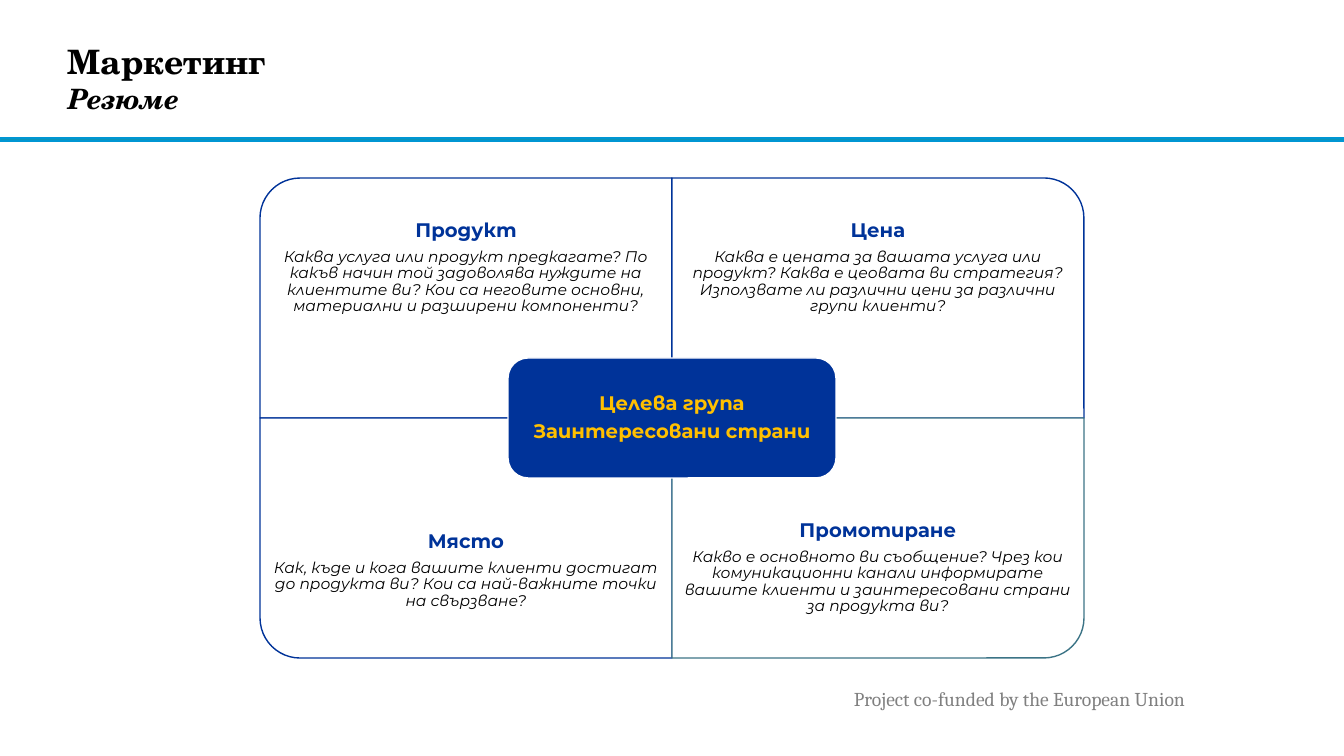
from pptx import Presentation
from pptx.dml.color import RGBColor
from pptx.enum.lang import MSO_LANGUAGE_ID
from pptx.enum.shapes import MSO_SHAPE
from pptx.enum.text import MSO_ANCHOR, PP_ALIGN
from pptx.util import Emu, Pt

WHITE = RGBColor(0xFF, 0xFF, 0xFF)
BLACK = RGBColor(0, 0, 0)
GREY = RGBColor(0x80, 0x80, 0x80)
NAVY = RGBColor(0x00, 0x33, 0x99)
TEAL = RGBColor(0x3C, 0x74, 0x86)
GOLD = RGBColor(0xFF, 0xC0, 0x00)
BAND_FILL = RGBColor(0x0C, 0x94, 0xB7)
BAND_LINE = RGBColor(0x00, 0x96, 0xD3)

RECTANGLE = MSO_SHAPE.RECTANGLE
ROUNDED = MSO_SHAPE.ROUNDED_RECTANGLE
ONE_ROUND = MSO_SHAPE.ROUND_1_RECTANGLE
LEFT, CENTER = PP_ALIGN.LEFT, PP_ALIGN.CENTER
TOP, MIDDLE = MSO_ANCHOR.TOP, MSO_ANCHOR.MIDDLE
BULGARIAN = MSO_LANGUAGE_ID.BULGARIAN

TITLE = {"name": "TeX Gyre Schola", "size": Pt(24), "bold": True, "color": BLACK,
         "language_id": BULGARIAN}
SUBTITLE = {**TITLE, "size": Pt(20), "italic": True}
HEADING = {"name": "Montserrat", "size": Pt(14), "bold": True, "color": NAVY,
           "language_id": BULGARIAN}
BODY = {**HEADING, "size": Pt(11), "bold": False, "italic": True, "color": BLACK}
HUB = {**HEADING, "color": GOLD}
FOOTER = {"name": "Cambria", "size": Pt(14), "color": GREY}

TITLE_LINES = [("Маркетинг", TITLE), ("Резюме", SUBTITLE)]
FOOTER_TEXT = "Project co-funded by the European Union"
HUB_LINES = ["Целева група", "Заинтересовани страни"]
QUADRANTS = [
    {"column": 0, "row": 0, "rotation": 270, "line": NAVY, "text_top": 178,
     "heading": "Продукт",
     "body": "Каква услуга или продукт предкагате? По какъв начин той задоволява нуждите "
             "на клиентите ви? Кои са неговите основни, материални и разширени компоненти?"},
    {"column": 1, "row": 0, "rotation": 0, "line": NAVY, "text_top": 178,
     "heading": "Цена",
     "body": "Каква е цената за вашата услуга или продукт? Каква е цеовата ви стратегия? "
             "Използвате ли различни цени за различни групи клиенти?"},
    {"column": 0, "row": 1, "rotation": 180, "line": NAVY, "text_top": 481,
     "heading": "Място",
     "body": "Как, къде и кога вашите клиенти достигат до продукта ви? "
             "Кои са най-важните точки на свързване?"},
    {"column": 1, "row": 1, "rotation": 90, "line": TEAL, "text_top": 478,
     "heading": "Промотиране",
     "body": "Какво е основното ви съобщение? Чрез кои комуникационни канали информирате "
             "вашите клиенти и заинтересовани страни за продукта ви?"},
]

SLIDE_WIDTH, SLIDE_HEIGHT = 1344, 756
GRID_LEFT, GRID_TOP = 260, 178
CELL_WIDTH, CELL_HEIGHT, TEXT_HEIGHT = 412, 240, 180
HUB_WIDTH, HUB_HEIGHT = 328, 120


def px(length):
    return Emu(round(length * 914400 / 100.8))


def format_font(font, values):
    for key, value in values.items():
        if key == "color":
            font.color.rgb = value
        else:
            setattr(font, key, value)


def add_panel(page, kind, area, fill, line, rotation=0):
    panel = page.shapes.add_shape(kind, *map(px, area))
    panel.shadow.inherit = False
    panel.fill.solid()
    panel.fill.fore_color.rgb = fill
    panel.line.color.rgb = line
    panel.line.width = Pt(1)
    panel.rotation = rotation
    return panel


def set_frame(frame, anchor, margin):
    frame.word_wrap = True
    frame.vertical_anchor = anchor
    for side in ("left", "right", "top", "bottom"):
        setattr(frame, f"margin_{side}", px(margin))


def write_centered(frame, lines, margin):
    set_frame(frame, MIDDLE, margin)
    for index, (text, values) in enumerate(lines):
        para = frame.paragraphs[0] if index == 0 else frame.add_paragraph()
        para.alignment = CENTER
        para.line_spacing = 0.9
        if index:
            para.space_before = Pt(4.9)
        span = para.add_run()
        span.text = text
        format_font(span.font, values)


def add_title(page):
    title = page.shapes.title
    title.left, title.top, title.width, title.height = map(px, (68, 18, 977, 120))
    set_frame(title.text_frame, MIDDLE, 0)
    para = title.text_frame.paragraphs[0]
    para.alignment = LEFT
    for index, (text, values) in enumerate(TITLE_LINES):
        if index:
            para.add_line_break()
        span = para.add_run()
        span.text = text
        format_font(span.font, values)


def add_footer(page):
    box = page.shapes.add_textbox(*map(px, (844, 682, 492, 34)))
    set_frame(box.text_frame, TOP, 5)
    box.text_frame.margin_left = px(10)
    span = box.text_frame.paragraphs[0].add_run()
    span.text = FOOTER_TEXT
    format_font(span.font, FOOTER)


def add_quadrant(page, quadrant):
    left = GRID_LEFT + quadrant["column"] * CELL_WIDTH
    top = GRID_TOP + quadrant["row"] * CELL_HEIGHT
    sideways = quadrant["rotation"] % 180 != 0
    width, height = (CELL_HEIGHT, CELL_WIDTH) if sideways else (CELL_WIDTH, CELL_HEIGHT)
    area = (left + (CELL_WIDTH - width) / 2, top + (CELL_HEIGHT - height) / 2, width, height)
    add_panel(page, ONE_ROUND, area, WHITE, quadrant["line"], quadrant["rotation"])
    box = page.shapes.add_textbox(*map(px, (left, quadrant["text_top"], CELL_WIDTH, TEXT_HEIGHT)))
    lines = [(quadrant["heading"], HEADING), (quadrant["body"], BODY)]
    write_centered(box.text_frame, lines, 11)


def main():
    deck = Presentation()
    deck.slide_width, deck.slide_height = px(SLIDE_WIDTH), px(SLIDE_HEIGHT)
    page = deck.slides.add_slide(deck.slide_layouts[5])
    add_panel(page, RECTANGLE, (0, 138, SLIDE_WIDTH, 3), BAND_FILL, BAND_LINE)
    add_footer(page)
    add_title(page)
    for quadrant in QUADRANTS:
        add_quadrant(page, quadrant)
    hub_left = GRID_LEFT + CELL_WIDTH - HUB_WIDTH / 2
    hub_top = GRID_TOP + CELL_HEIGHT - HUB_HEIGHT / 2
    hub = add_panel(page, ROUNDED, (hub_left, hub_top, HUB_WIDTH, HUB_HEIGHT), NAVY, WHITE)
    write_centered(hub.text_frame, [(text, HUB) for text in HUB_LINES], 6)
    deck.save("out.pptx")


if __name__ == "__main__":
    main()
